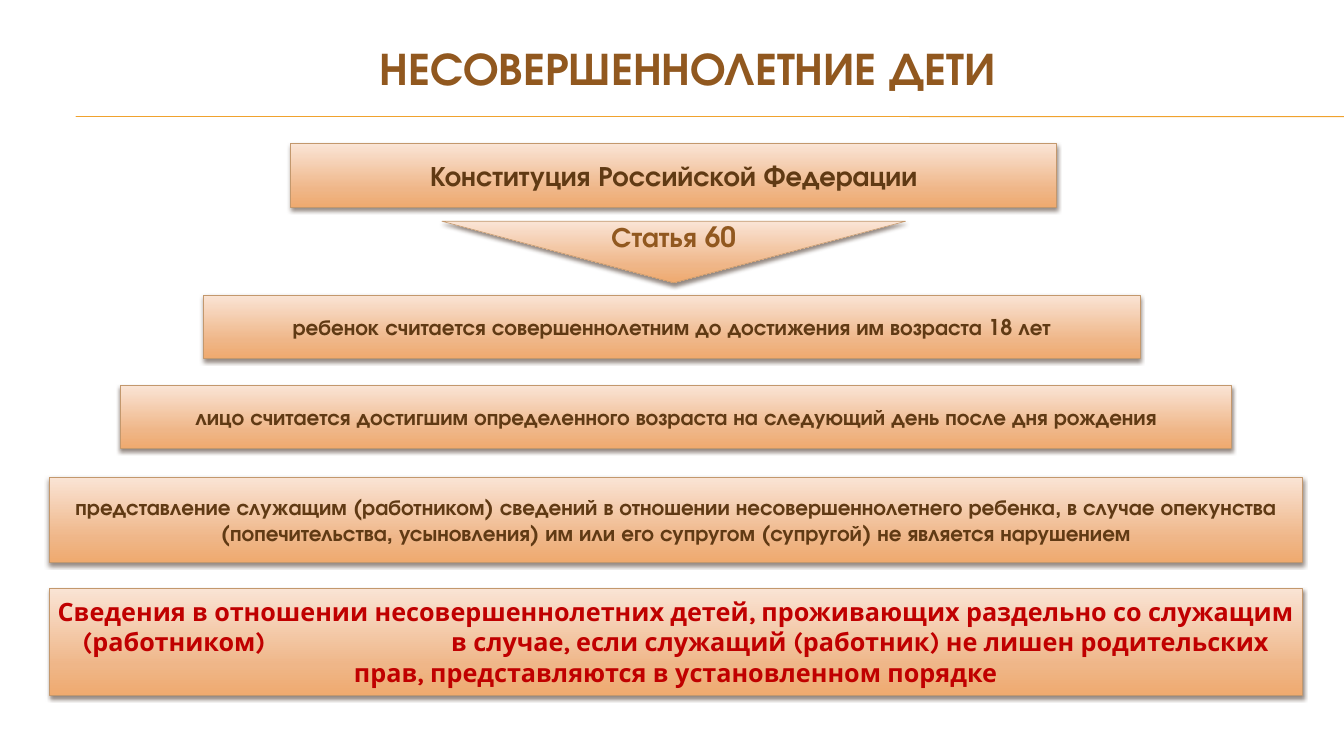
from copy import deepcopy
from lxml.etree import SubElement
from pptx import Presentation
from pptx.dml.color import RGBColor
from pptx.enum.shapes import MSO_CONNECTOR, MSO_SHAPE
from pptx.enum.text import MSO_ANCHOR, PP_ALIGN
from pptx.oxml.ns import qn
from pptx.util import Inches, Pt

COLORS = {
    "title": "91581F",
    "body": "603A14",
    "alert": "C00000",
    "rule": "F0A22E",
    "edge": "C3986D",
    "shade": "4E3B30",
    "top": "FAE4D5",
    "mid": "EFB688",
    "base": "EFAA6F",
}
STOPS = [("top", 0), ("mid", 0.72), ("base", 1)]
FONT = "TeX Gyre Adventor"
CENTER = 13.37


def color(name):
    return RGBColor.from_string(COLORS[name])


class Page:
    def __init__(self, slide):
        self.slide = slide

    def rule(self, start, end):
        line = self.slide.shapes.add_connector(
            MSO_CONNECTOR.STRAIGHT, *map(Inches, start + end))
        line.line.color.rgb = color("rule")
        line.line.width = Pt(0.75)
        SubElement(line._element.spPr, qn("a:effectLst"))

    def label(self, shape, text, size, tone, font=FONT):
        frame = shape.text_frame
        frame.word_wrap = True
        frame.text = text
        para = frame.paragraphs[0]
        para.alignment = PP_ALIGN.CENTER
        for run in para.runs:
            self.style(run, size, tone, font)

    def style(self, run, size, tone, font):
        run.font.name = font
        run.font.size = Pt(size)
        run.font.bold = True
        run.font.color.rgb = color(tone)

    def title(self, box, text):
        shape = self.slide.shapes.add_textbox(*map(Inches, box))
        self.label(shape, text, 66, "title")

    def block(self, box, text, size, tone="body", font=FONT,
              kind=MSO_SHAPE.RECTANGLE):
        shape = self.slide.shapes.add_shape(kind, *map(Inches, box))
        self.shade(shape)
        shape.line.color.rgb = color("edge")
        shape.line.width = Pt(0.79)
        self.shadow(shape)
        shape.text_frame.vertical_anchor = MSO_ANCHOR.MIDDLE
        self.label(shape, text, size, tone, font)
        return shape

    def shade(self, shape):
        fill = shape.fill
        fill.gradient()
        fill.gradient_angle = 270
        stops = fill._fill._gradFill.gsLst
        stops.append(deepcopy(stops[-1]))
        for stop, (name, place) in zip(fill.gradient_stops, STOPS):
            stop.color.rgb = color(name)
            stop.position = place

    def shadow(self, shape):
        shape.shadow.inherit = False
        effects = shape._element.spPr.find(qn("a:effectLst"))
        outer = SubElement(effects, qn("a:outerShdw"), blurRad=str(Pt(6)),
                           dist=str(Pt(4)), dir="5400000", rotWithShape="0")
        tint = SubElement(outer, qn("a:srgbClr"), val=COLORS["shade"])
        SubElement(tint, qn("a:alpha"), val="60000")

    def extend(self, shape, gap, text, size, tone, font):
        para = shape.text_frame.paragraphs[0]
        space, rest = para.add_run(), para.add_run()
        space.text, rest.text = " ", text
        for run in (space, rest):
            self.style(run, size, tone, font)
        space.font._element.set("spc", str(gap * 100))


def main():
    deck = Presentation()
    deck.slide_width, deck.slide_height = Inches(26.67), Inches(15)
    page = Page(deck.slides.add_slide(deck.slide_layouts[6]))

    page.rule((1.5, 2.3), (26.67, 2.3))
    page.rule((1.5, 2.31), (26.67, 2.32))
    page.title((5.77, 0.73, 15.75, 1.21), "НЕСОВЕРШЕННОЛЕТНИЕ ДЕТИ")
    page.block((CENTER - 7.6, 2.85, 15.2, 1.26),
               "Конституция Российской Федерации", 40)
    page.block((CENTER - 4.6, 4.39, 9.2, 1.22), "Статья 60", 40, "title",
               kind=MSO_SHAPE.FLOWCHART_MERGE)

    steps = [
        (4.04, 5.85, 18.58, 1.26,
         "ребенок считается совершеннолетним до достижения им возраста 18 лет"),
        (2.39, 7.65, 22.05, 1.24,
         "лицо считается достигшим определенного возраста на следующий день "
         "после дня рождения"),
        (0.97, 9.47, 24.88, 1.68,
         "представление служащим (работником) сведений в отношении "
         "несовершеннолетнего ребенка, в случае опекунства (попечительства, "
         "усыновления) им или его супругом (супругой) не является нарушением"),
    ]
    for *box, text in steps:
        page.block(box, text, 31)

    look = (36, "alert", "Karla")
    note = page.block((0.97, 11.67, 24.88, 2.13),
                      "Сведения в отношении несовершеннолетних детей, "
                      "проживающих раздельно со служащим (работником)", *look)
    page.extend(note, 256, "в случае, если служащий (работник) не лишен "
                "родительских прав, представляются в установленном порядке",
                *look)
    deck.save("out.pptx")


if __name__ == "__main__":
    main()
